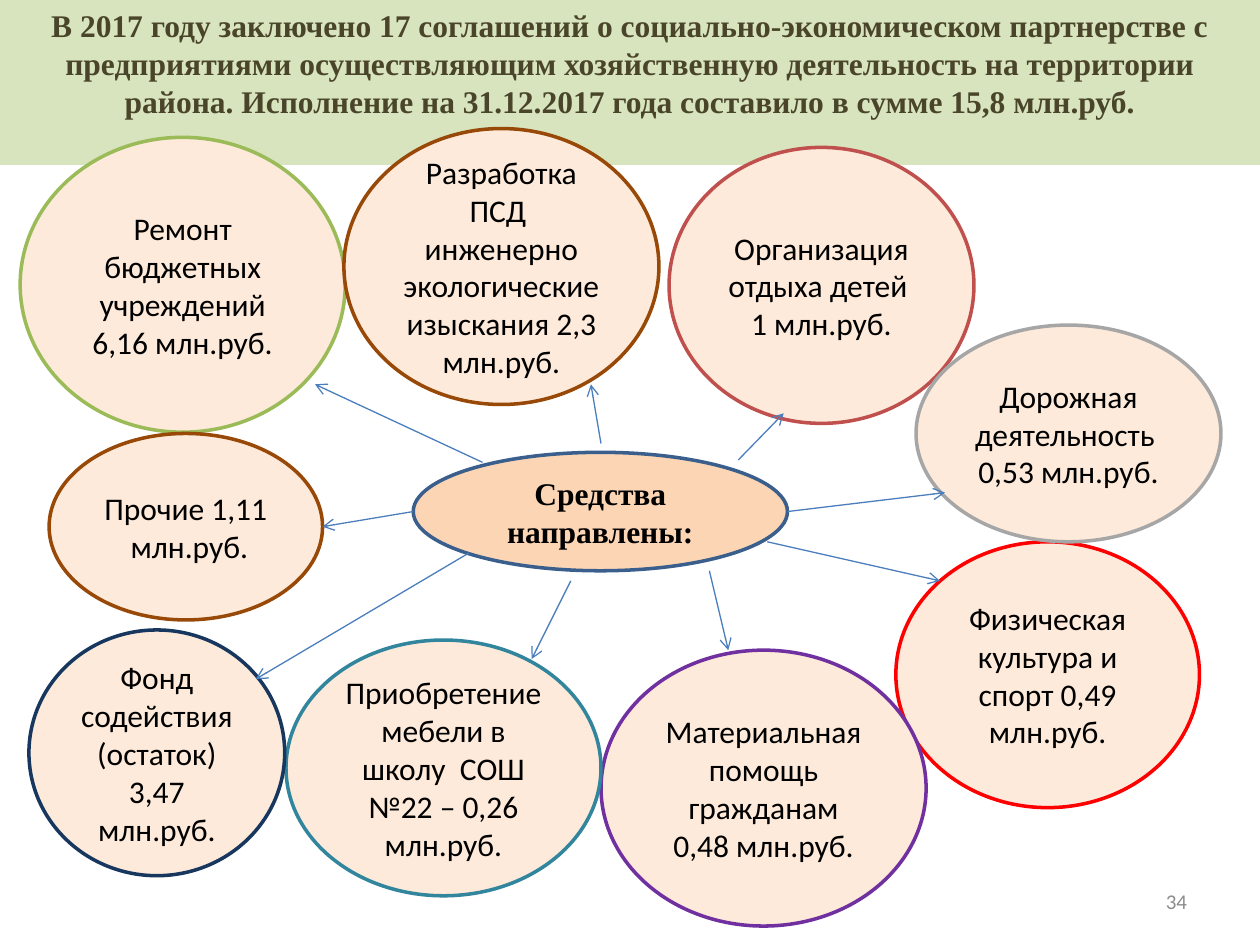
from dataclasses import dataclass

import pptx
import pptx.dml.color
import pptx.enum.shapes
import pptx.enum.text
import pptx.oxml.ns
import pptx.util
from lxml import etree
from pptx.util import Inches

ALIGN = pptx.enum.text.PP_ALIGN
ANCHOR = pptx.enum.text.MSO_ANCHOR


@dataclass(frozen=True)
class Theme:
    """Colours, fonts and type sizes of the slide."""
    heading_font: str = "Times New Roman"
    body_font: str = "Calibri"
    text_size: int = 18
    number_size: int = 12
    outline: float = 2
    arrow_width: float = 0.75
    banner: str = "D7E4BD"
    banner_text: str = "4A452A"
    text: str = "000000"
    muted: str = "8C8C8C"
    bubble: str = "FDEADA"
    hub: str = "FCD5B5"
    hub_line: str = "3A5F8C"
    arrow: str = "4B7EBC"


THEME = Theme()

TITLE = (
    "В 2017 году заключено 17 соглашений о социально-экономическом партнерстве с "
    "предприятиями осуществляющим хозяйственную деятельность на территории района. "
    "Исполнение на 31.12.2017 года составило в сумме 15,8 млн.руб."
)

BUBBLES = [
    ("Организация отдыха детей  1 млн.руб.", (5.31, 1.17, 2.42, 2.19), "C0504D"),
    ("Ремонт бюджетных учреждений 6,16 млн.руб.", (0.16, 1.09, 2.58, 2.34), "9BBB59"),
    ("Разработка ПСД  инженерно экологические изыскания 2,3 млн.руб.",
     (2.73, 1.02, 2.5, 2.19), "984807"),
    ("Физическая культура и спорт 0,49 млн.руб.", (7.11, 4.3, 2.41, 2.11), "FF0000"),
    ("Материальная помощь гражданам 0,48 млн.руб.", (4.77, 5.16, 2.58, 2.19), "7030A0"),
    ("Дорожная деятельность  0,53 млн.руб.", (7.27, 2.58, 2.42, 1.72), "A6A6A6"),
    ("Приобретение мебели в школу  СОШ №22 – 0,26 млн.руб.",
     (2.27, 5.08, 2.5, 2.03), "31859C"),
    ("Фонд содействия (остаток) 3,47 млн.руб.", (0.23, 5, 2.03, 1.95), "17375E"),
    ("Прочие 1,11  млн.руб.", (0.39, 3.44, 2.17, 1.48), "984807"),
]

ARROWS = [
    (3.83, 3.67, 2.5, 3.05),
    (4.77, 3.52, 4.69, 3.05),
    (5.86, 3.65, 6.22, 3.28),
    (6.25, 4.06, 7.5, 3.91),
    (6.09, 4.3, 7.46, 4.61),
    (3.28, 4.06, 2.56, 4.18),
    (3.72, 4.39, 2.03, 5.39),
    (4.53, 4.61, 4.22, 5.23),
    (5.63, 4.53, 5.78, 5.16),
]


def rgb(value):
    """Turn a hex string into a colour."""
    return pptx.dml.color.RGBColor.from_string(value)


def inches(values):
    """Turn plain numbers into lengths."""
    return [Inches(value) for value in values]


def write_text(shape, text, font, size, color, bold=False,
               align=ALIGN.CENTER, anchor=ANCHOR.MIDDLE):
    """Put one formatted paragraph into a shape."""
    frame = shape.text_frame
    frame.word_wrap = True
    frame.auto_size = pptx.enum.text.MSO_AUTO_SIZE.NONE
    frame.vertical_anchor = anchor
    frame.text = text
    paragraph = frame.paragraphs[0]
    paragraph.alignment = align
    paragraph.font.name = font
    paragraph.font.size = pptx.util.Pt(size)
    paragraph.font.bold = bold
    paragraph.font.color.rgb = rgb(color)


def add_title(slide, box):
    """Format the title placeholder as a banner."""
    title = slide.shapes.title
    title.left, title.top, title.width, title.height = inches(box)
    title.fill.solid()
    title.fill.fore_color.rgb = rgb(THEME.banner)
    write_text(title, TITLE, THEME.heading_font, THEME.text_size,
               THEME.banner_text, bold=True, anchor=ANCHOR.TOP)


def add_ellipse(slide, box, text, fill, line, font=THEME.body_font, bold=False):
    """Add an outlined ellipse with centred text."""
    ellipse = slide.shapes.add_shape(
        pptx.enum.shapes.MSO_SHAPE.OVAL, *inches(box))
    ellipse.shadow.inherit = False
    ellipse.fill.solid()
    ellipse.fill.fore_color.rgb = rgb(fill)
    ellipse.line.color.rgb = rgb(line)
    ellipse.line.width = pptx.util.Pt(THEME.outline)
    write_text(ellipse, text, font, THEME.text_size, THEME.text, bold)


def add_arrow(slide, ends):
    """Add a thin connector with an open arrowhead at its end."""
    arrow = slide.shapes.add_connector(
        pptx.enum.shapes.MSO_CONNECTOR.STRAIGHT, *inches(ends))
    arrow.line.color.rgb = rgb(THEME.arrow)
    arrow.line.width = pptx.util.Pt(THEME.arrow_width)
    properties = arrow.element.spPr
    line = properties.find(pptx.oxml.ns.qn("a:ln"))
    etree.SubElement(line, pptx.oxml.ns.qn("a:tailEnd"), type="arrow")
    etree.SubElement(properties, pptx.oxml.ns.qn("a:effectLst"))


def add_slide_number(slide, box, number):
    """Add the page number at the right of its box."""
    text_box = slide.shapes.add_textbox(*inches(box))
    write_text(text_box, number, THEME.body_font, THEME.number_size,
               THEME.muted, align=ALIGN.RIGHT)


def add_diagram(slide):
    """Add the hub, the spending bubbles and the arrows between them."""
    add_ellipse(slide, (3.28, 3.59, 2.97, 0.94), "Средства направлены:",
                THEME.hub, THEME.hub_line, THEME.heading_font, bold=True)
    for text, box, line in BUBBLES:
        add_ellipse(slide, box, text, THEME.bubble, line)
    for ends in ARROWS:
        add_arrow(slide, ends)


def main():
    """Build and save the presentation."""
    presentation = pptx.Presentation()
    presentation.slide_width = Inches(10)
    presentation.slide_height = Inches(7.5)
    slide = presentation.slides.add_slide(presentation.slide_layouts[5])
    add_title(slide, (0, 0, 10, 1.31))
    add_slide_number(slide, (7.19, 6.95, 2.33, 0.4), "34")
    add_diagram(slide)
    presentation.save("out.pptx")


if __name__ == "__main__":
    main()
